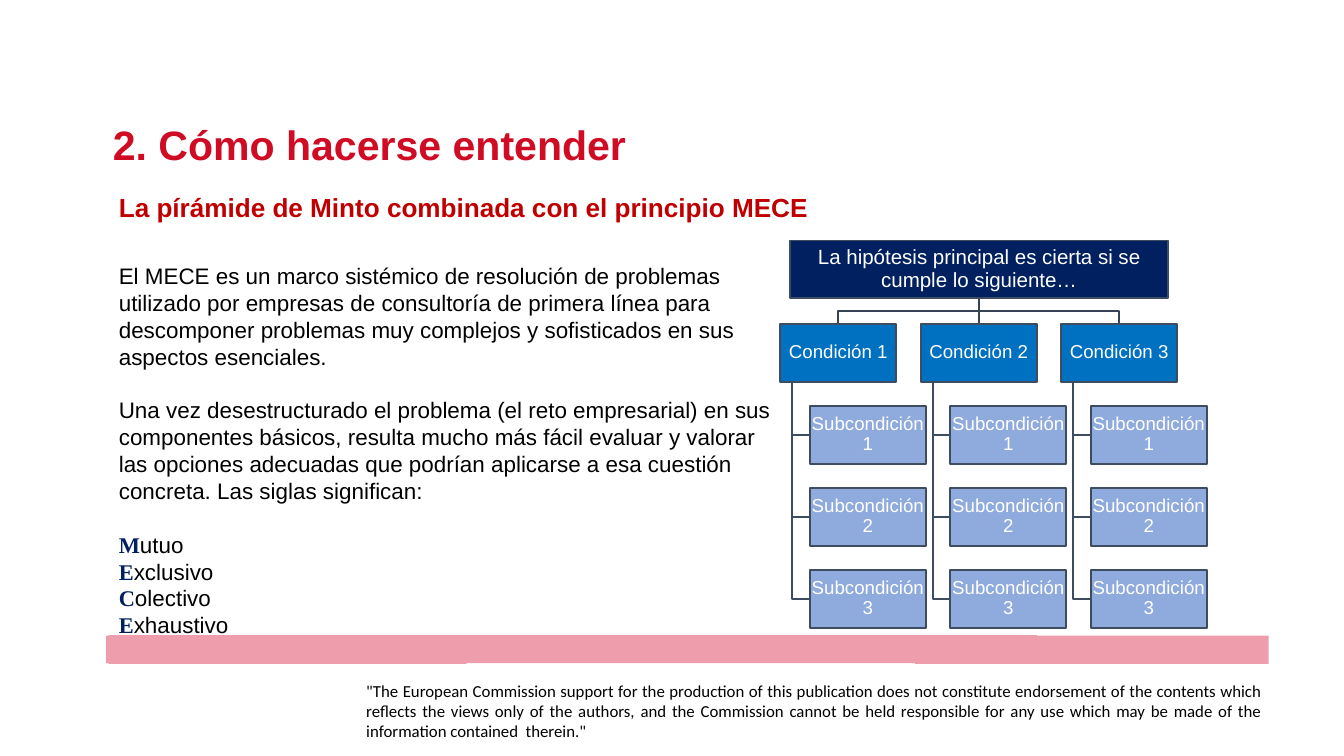
from typing import NamedTuple

from lxml import etree
from pptx import Presentation
from pptx.dml.color import RGBColor
from pptx.enum import shapes, text
from pptx.oxml import ns
from pptx.util import Inches, Pt

BLACK, WHITE, NAVY = "000000", "FFFFFF", "002060"
BOX_LINE, STEM_LINE = "3E4C60", "364355"

# Tree grid, in inches
COLUMN_X, COLUMN_STEP = 11.61, 2.09
ROW_Y, ROW_STEP = 4.82, 1.22
BOX_W, BOX_H = 1.73, 0.86
SUB_INDENT, SPINE_INDENT = 0.44, 0.18

BAND_OUTLINE = [
    (18.88, 9.46), (15.43, 9.46), (15.43, 9.45), (1.62, 9.45), (1.62, 9.46),
    (1.58, 9.46), (1.58, 9.87), (1.62, 9.87), (1.62, 9.88), (6.94, 9.88),
    (6.94, 9.87), (13.62, 9.87), (13.62, 9.88), (18.88, 9.88),
]
MECE_WORDS = ["Mutuo", "Exclusivo", "Colectivo", "Exhaustivo"]


class Box(NamedTuple):
    x: float
    y: float
    w: float
    h: float


class Node(NamedTuple):
    label: str
    box: Box
    fill: str
    size: int = 20
    inset: float = 0.01


def rgb(color: str) -> RGBColor:
    return RGBColor.from_string(color)


def add_run(p, words: str, *, size: int, font: str = "Arial",
            color: str = BLACK, bold: bool = False) -> None:
    r = p.add_run()
    r.text = words
    r.font.size, r.font.name, r.font.bold = Pt(size), font, bold
    r.font.color.rgb = rgb(color)


def set_frame(sp, inset_x: float, inset_y: float, anchor=text.MSO_ANCHOR.TOP):
    tf = sp.text_frame
    tf.word_wrap = True
    tf.auto_size = text.MSO_AUTO_SIZE.NONE
    tf.margin_left = tf.margin_right = Inches(inset_x)
    tf.margin_top = tf.margin_bottom = Inches(inset_y)
    tf.vertical_anchor = anchor
    return tf


def add_text_box(s, box: Box, inset_x: float = 0.1, inset_y: float = 0.05):
    return set_frame(s.shapes.add_textbox(*map(Inches, box)), inset_x, inset_y)


def add_outline(s, points, *, fill: str = "", line: str = "") -> None:
    """Draw a closed filled shape, or an open line when no fill is given."""
    (x, y), *rest = [(Inches(px), Inches(py)) for px, py in points]
    builder = s.shapes.build_freeform(x, y)
    builder.add_line_segments(rest, close=bool(fill))
    sp = builder.convert_to_shape()
    sp.shadow.inherit = False
    if fill:
        sp.fill.solid()
        sp.fill.fore_color.rgb = rgb(fill)
    else:
        sp.fill.background()
    if line:
        sp.line.color.rgb, sp.line.width = rgb(line), Pt(2)
    else:
        sp.line.fill.background()


def add_stem(s, x: float, top: float, bottom: float) -> None:
    stem = s.shapes.add_connector(
        shapes.MSO_CONNECTOR.STRAIGHT, *map(Inches, (x, top, x, bottom)))
    stem.line.color.rgb, stem.line.width = rgb(STEM_LINE), Pt(2)
    etree.SubElement(stem._element.spPr, ns.qn("a:effectLst"))


def add_node(s, node: Node) -> None:
    sp = s.shapes.add_shape(shapes.MSO_SHAPE.RECTANGLE, *map(Inches, node.box))
    sp.shadow.inherit = False
    sp.fill.solid()
    sp.fill.fore_color.rgb = rgb(node.fill)
    sp.line.color.rgb, sp.line.width = rgb(BOX_LINE), Pt(2)
    p = set_frame(sp, node.inset, node.inset, text.MSO_ANCHOR.MIDDLE).paragraphs[0]
    p.alignment, p.line_spacing = text.PP_ALIGN.CENTER, 0.9
    add_run(p, node.label, size=node.size, color=WHITE)


def add_tree(s) -> None:
    root = Node("La hipótesis principal es cierta si se cumple lo siguiente…",
                Box(11.76, 3.58, 5.62, BOX_H), NAVY, 22, 0.02)
    root_x, root_bottom = root.box.x + root.box.w / 2, root.box.y + BOX_H
    middle_y = (root_bottom + ROW_Y) / 2
    nodes = [root]
    for column in range(3):
        x = COLUMN_X + column * COLUMN_STEP
        if column == 1:
            add_stem(s, root_x, root_bottom, ROW_Y)
        else:
            center = x + BOX_W / 2
            add_outline(s, [(root_x, root_bottom), (root_x, middle_y),
                            (center, middle_y), (center, ROW_Y)], line=STEM_LINE)
        nodes.append(Node(f"Condición {column + 1}",
                          Box(x, ROW_Y, BOX_W, BOX_H), "0070C0"))
        spine_x, sub_x = x + SPINE_INDENT, x + SUB_INDENT
        for row in range(1, 4):
            y = ROW_Y + row * ROW_STEP
            add_outline(s, [(spine_x, ROW_Y + BOX_H), (spine_x, y + BOX_H / 2),
                            (sub_x, y + BOX_H / 2)], line=BOX_LINE)
            nodes.append(Node(f"Subcondición {row}",
                              Box(sub_x, y, BOX_W, BOX_H), "8FAADC"))
    for node in nodes:
        add_node(s, node)


def add_body(s) -> None:
    tf = add_text_box(s, Box(1.67, 3.85, 10.03, 5.76))
    intro = [
        "El MECE es un marco sistémico de resolución de problemas utilizado por "
        "empresas de consultoría de primera línea para descomponer problemas muy "
        "complejos y sofisticados en sus aspectos esenciales.",
        "Una vez desestructurado el problema (el reto empresarial) en sus componentes "
        "básicos, resulta mucho más fácil evaluar y valorar las opciones adecuadas que "
        "podrían aplicarse a esa cuestión concreta. Las siglas significan:",
    ]
    for i, words in enumerate(intro + MECE_WORDS):
        p = tf.paragraphs[0] if i == 0 else tf.add_paragraph()
        if i in (1, len(intro)):
            p.space_before = Pt(28.8)
        if words in MECE_WORDS:
            add_run(p, words[0], size=24, font="Times New Roman", color=NAVY, bold=True)
            words = words[1:]
        add_run(p, words, size=24)


def add_footer(s) -> None:
    add_outline(s, BAND_OUTLINE, fill="ED9DAB")
    p = add_text_box(s, Box(5.45, 10.15, 13.33, 0.76), 0, 0).paragraphs[0]
    p.alignment, p.line_spacing = text.PP_ALIGN.JUSTIFY, 0.98
    add_run(p, '"The European Commission support for the production of this publication '
               "does not constitute endorsement of the contents which reflects the views "
               "only of the authors, and the Commission cannot be held responsible for any "
               'use which may be made of the information contained  therein."',
            size=18, font="Calibri")


def add_headings(s) -> None:
    title = s.shapes.title
    title.left, title.top, title.width, title.height = map(
        Inches, Box(1.58, 1.72, 14.2, 0.84))
    p = set_frame(title, 0.1, 0.05).paragraphs[0]
    p.alignment = text.PP_ALIGN.LEFT
    add_run(p, "2. Cómo hacerse entender", size=44, color="D00B24", bold=True)
    p = add_text_box(s, Box(1.67, 2.8, 17.35, 1.04)).paragraphs[0]
    add_run(p, "La pírámide de Minto combinada con el principio MECE",
            size=28, color="C00000", bold=True)


def main() -> None:
    prs = Presentation()
    prs.slide_width, prs.slide_height = Inches(20), Inches(11.25)
    s = prs.slides.add_slide(prs.slide_layouts[5])
    add_footer(s)
    add_headings(s)
    add_body(s)
    add_tree(s)
    prs.save("out.pptx")


if __name__ == "__main__":
    main()
